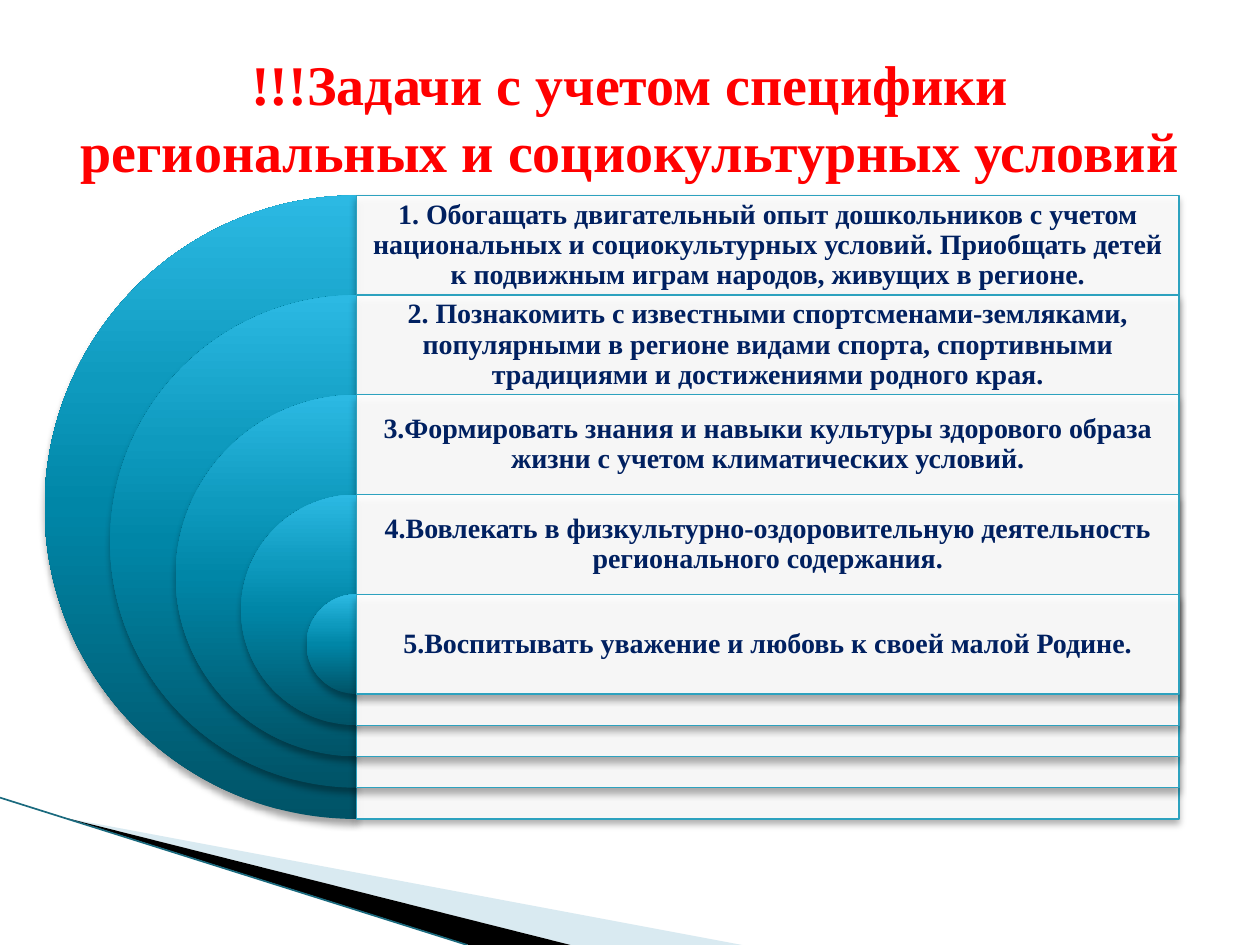
from dataclasses import dataclass

from lxml.etree import SubElement
from pptx import Presentation
from pptx.dml.color import RGBColor
from pptx.enum.shapes import MSO_CONNECTOR as Connector, MSO_SHAPE as Shape
from pptx.enum.text import MSO_ANCHOR as Anchor, PP_ALIGN as Align
from pptx.oxml.ns import qn
from pptx.util import Cm, Pt


@dataclass(frozen=True)
class Theme:
    font: str = "Times New Roman"
    title: str = "FF0000"
    task: str = "002060"
    band: str = "FFFFFF"
    band_edge: str = "2DA2BF"
    shadow: str = "000000"
    swoosh_pale: str = "A0CBDC"
    swoosh_dark: str = "000000"
    swoosh_edge: str = "1A6A7E"
    arc_stops: tuple = ((0, "005367"), (50, "0086A7"), (70, "0E9ABE"), (100, "2CB9E3"))
    title_size: int = 32
    task_size: int = 16


THEME = Theme()
TITLE = "!!!Задачи с учетом специфики региональных и социокультурных условий"
TASKS = (
    "1. Обогащать двигательный опыт дошкольников с учетом национальных и "
    "социокультурных условий. Приобщать детей к подвижным играм народов, "
    "живущих в регионе.",
    "2. Познакомить с известными спортсменами-земляками, популярными в регионе "
    "видами спорта, спортивными традициями и достижениями родного края.",
    "3.Формировать знания и навыки культуры здорового образа жизни с учетом "
    "климатических условий.",
    "4.Вовлекать в физкультурно-оздоровительную деятельность регионального содержания.",
    "5.Воспитывать уважение и любовь к своей малой Родине.",
)


def set_all(target, **values):
    for name, value in values.items():
        setattr(target, name, value)


def add_color(parent, color, alpha=100):
    rgb = SubElement(parent, qn("a:srgbClr"), val=color)
    if alpha < 100:
        SubElement(rgb, qn("a:alpha"), val=str(alpha * 1000))


def fill_solid(shape, color, alpha=100):
    shape.fill.solid()
    shape.fill.fore_color.rgb = RGBColor.from_string(color)
    if alpha < 100:
        rgb = shape.fill._xPr.find(".//" + qn("a:srgbClr"))
        SubElement(rgb, qn("a:alpha"), val=str(alpha * 1000))


def fill_gradient(shape, stops):
    shape.fill.gradient()
    shape.fill.gradient_angle = 90
    stop_list = shape.fill._xPr.find(".//" + qn("a:gsLst"))
    stop_list.clear()
    for position, color in stops:
        add_color(SubElement(stop_list, qn("a:gs"), pos=str(position * 1000)), color)


def add_shadow(shape):
    shape.shadow.inherit = False
    effects = shape._element.spPr.find(qn("a:effectLst"))
    outer = SubElement(effects, qn("a:outerShdw"), blurRad=str(Pt(4)),
                       dist=str(Pt(3)), dir="5400000", rotWithShape="0")
    add_color(outer, THEME.shadow, 35)


def add_text(slide, box, text, size, color, inset, spacing=1.0):
    frame = slide.shapes.add_textbox(*map(Cm, box)).text_frame
    set_all(frame, word_wrap=True, vertical_anchor=Anchor.MIDDLE, margin_left=inset,
            margin_right=inset, margin_top=inset, margin_bottom=inset)
    paragraph = frame.paragraphs[0]
    set_all(paragraph, text=text, alignment=Align.CENTER, line_spacing=spacing)
    set_all(paragraph.runs[0].font, name=THEME.font, size=Pt(size), bold=True)
    paragraph.runs[0].font.color.rgb = RGBColor.from_string(color)


def add_swoosh(slide, left, top, bottom):
    """Draw the corner wedges, fanning out from one tip to the slide's bottom edge."""
    tip = (left + 1.37, top + 0.42)
    wedges = ((14.96, 11.5, THEME.swoosh_pale, 40), (11.5, 9.45, THEME.swoosh_dark, 100))
    for far, near, color, alpha in wedges:
        builder = slide.shapes.build_freeform(Cm(tip[0]), Cm(tip[1]))
        builder.add_line_segments([(Cm(left + x), Cm(bottom)) for x in (far, near)])
        wedge = builder.convert_to_shape()
        fill_solid(wedge, color, alpha)
        wedge.line.fill.background()
        wedge.shadow.inherit = False
    edge = slide.shapes.add_connector(
        Connector.STRAIGHT, *map(Cm, (left, top, left + 9.42, bottom)))
    edge.line.width = Pt(0.95)
    edge.line.color.rgb = RGBColor.from_string(THEME.swoosh_edge)
    SubElement(edge._element.spPr, qn("a:effectLst"))


def add_target_list(slide, left, top, width, height, tasks):
    """Nest half discs on one axis, each with a band of text to its right."""
    row = 2.01
    shrink = (height - row) / (len(tasks) - 1)
    axis = left + height / 2
    band_width = width - height / 2
    for index, task in enumerate(tasks):
        y = top + index * row
        size = height - index * shrink
        disc = slide.shapes.add_shape(
            Shape.PIE, *map(Cm, (axis - size / 2, y, size, size)))
        disc.adjustments[0], disc.adjustments[1] = 54, 162
        fill_gradient(disc, THEME.arc_stops)
        disc.line.fill.background()
        add_shadow(disc)

        band = slide.shapes.add_shape(
            Shape.RECTANGLE, *map(Cm, (axis, y, band_width, size)))
        fill_solid(band, THEME.band, 90)
        band.line.color.rgb = RGBColor.from_string(THEME.band_edge)
        band.line.width = Pt(0.75)
        add_shadow(band)
        add_text(slide, (axis, y, band_width, row), task, THEME.task_size,
                 THEME.task, Cm(0.17), 0.9)


def main():
    deck = Presentation()
    set_all(deck, slide_width=Cm(25.4), slide_height=Cm(19.05))
    slide = deck.slides.add_slide(deck.slide_layouts[6])
    add_swoosh(slide, 0, 16.08, 19.05)
    add_target_list(slide, 0.9, 3.94, 22.87, 12.57, TASKS)
    add_text(slide, (1.27, 0.76, 22.86, 3.18), TITLE, THEME.title_size,
             THEME.title, Cm(0.2))
    deck.save("out.pptx")


if __name__ == "__main__":
    main()
